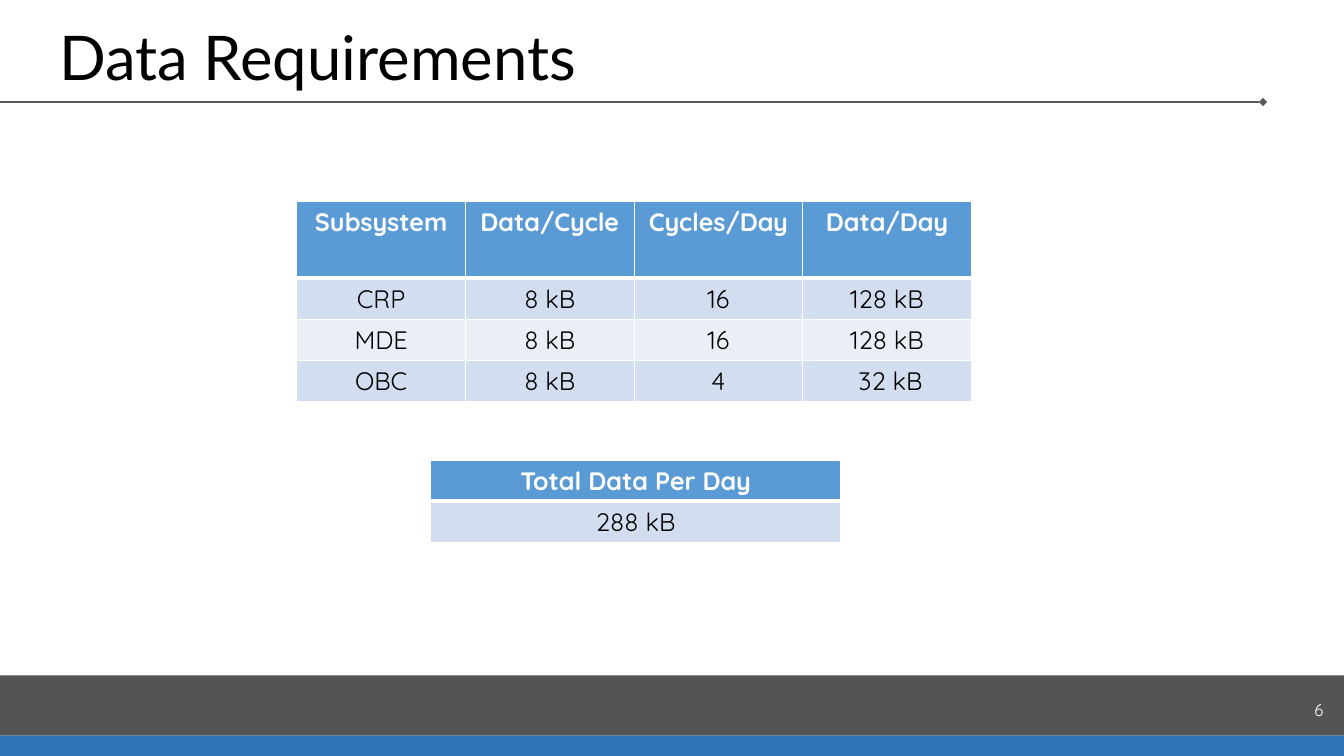
from lxml import etree
from pptx import Presentation
from pptx.dml.color import RGBColor
from pptx.enum import shapes, text
from pptx.oxml import parse_xml
from pptx.oxml.ns import nsdecls, qn
from pptx.util import Cm, Pt

WHITE = RGBColor(0xFF, 0xFF, 0xFF)
BLACK = RGBColor(0, 0, 0)
GREY = RGBColor(0x59, 0x59, 0x59)
NAVY = RGBColor(0x2E, 0x75, 0xB6)
BLUE = RGBColor(0x5B, 0x9B, 0xD5)
BANDS = [RGBColor(0xD2, 0xDE, 0xEF), RGBColor(0xEA, 0xEF, 0xF7)]

WIDTH, HEIGHT = Cm(33.87), Cm(19.05)

NEEDS = [
    ["Subsystem", "Data/Cycle", "Cycles/Day", "Data/Day"],
    ["CRP", "8 kB", "16", "128 kB"],
    ["MDE", "8 kB", "16", "128 kB"],
    ["OBC", "8 kB", "4", " 32 kB"],
]
TOTAL = [["Total Data Per Day"], ["288 kB"]]


def style(para, font, size, color, align, bold=False):
    para.alignment = align
    para.font.name = font
    para.font.size = Pt(size)
    para.font.color.rgb = color
    para.font.bold = bold


def add_bar(slide, top, height, color, alpha=100):
    """Add a full-width bar; alpha is its opacity in percent."""
    bar = slide.shapes.add_shape(
        shapes.MSO_SHAPE.RECTANGLE, 0, top, WIDTH, height)
    bar.shadow.inherit = False
    bar.line.fill.background()
    bar.fill.solid()
    bar.fill.fore_color.rgb = color
    if alpha < 100:
        tint = bar.fill._xPr.find(".//" + qn("a:srgbClr"))
        etree.SubElement(tint, qn("a:alpha")).set("val", str(alpha * 1000))


def add_rule(slide, top, end):
    """Add the line under the title, ending in a diamond."""
    rule = slide.shapes.add_connector(
        shapes.MSO_CONNECTOR.STRAIGHT, 0, top, end, top)
    rule.line.color.rgb = GREY
    rule.line.width = Pt(1)
    etree.SubElement(rule.line._ln, qn("a:tailEnd")).set("type", "diamond")
    etree.SubElement(rule._element.spPr, qn("a:effectLst"))


def add_text(slide, words, place, anchor, *look):
    frame = slide.shapes.add_textbox(*place).text_frame
    frame.word_wrap = True
    frame.vertical_anchor = anchor
    para = frame.paragraphs[0]
    para.text = words
    style(para, *look)
    return para


def add_edges(cell, top, bottom):
    """Give a cell white borders, 1 pt wide at the sides."""
    props = cell._tc.get_or_add_tcPr()
    for side, width in zip("LRTB", (1, 1, top, bottom)):
        props.append(parse_xml(
            f'<a:ln{side} {nsdecls("a")} w="{Pt(width)}"><a:solidFill>'
            f'<a:srgbClr val="{WHITE}"/></a:solidFill></a:ln{side}>'))


def add_grid(slide, rows, left, top, width, head, body):
    """Add a banded table; head and body are row heights."""
    count = len(rows[0])
    grid = slide.shapes.add_table(
        len(rows), count, left, top, width,
        head + body * (len(rows) - 1)).table
    for r, row in enumerate(rows):
        first = r == 0
        grid.rows[r].height = body if r else head
        for c, words in enumerate(row):
            cell = grid.cell(r, c)
            add_edges(cell, 3 if r == 1 else 1, 3 if first else 1)
            cell.fill.solid()
            cell.fill.fore_color.rgb = BLUE if first else BANDS[(r - 1) % 2]
            cell.text = words
            style(cell.text_frame.paragraphs[0], "Quicksand", 18,
                  WHITE if first else BLACK, text.PP_ALIGN.CENTER, first)


def main():
    deck = Presentation()
    deck.slide_width, deck.slide_height = WIDTH, HEIGHT
    slide = deck.slides.add_slide(deck.slide_layouts[6])

    add_bar(slide, Cm(17.02), Cm(1.52), BLACK, 67)
    add_rule(slide, Cm(2.57), Cm(31.83))
    add_bar(slide, Cm(18.54), Cm(0.51), NAVY)

    title = add_text(
        slide, "Data Requirements", (Cm(1.24), Cm(0.48), Cm(29.21), Cm(2.01)),
        text.MSO_ANCHOR.BOTTOM, "Lato", 44, BLACK, text.PP_ALIGN.LEFT)
    title.line_spacing = 0.9
    add_text(
        slide, "6", (Cm(25.98), Cm(17.37), Cm(7.62), Cm(1.02)),
        text.MSO_ANCHOR.MIDDLE, "Quicksand", 12, WHITE, text.PP_ALIGN.RIGHT)

    add_grid(slide, NEEDS, Cm(7.48), Cm(5.08), Cm(17), Cm(1.93), Cm(1.04))
    add_grid(slide, TOTAL, Cm(10.85), Cm(11.6), Cm(10.34), Cm(1.03), Cm(1.03))

    deck.save("out.pptx")


if __name__ == "__main__":
    main()
